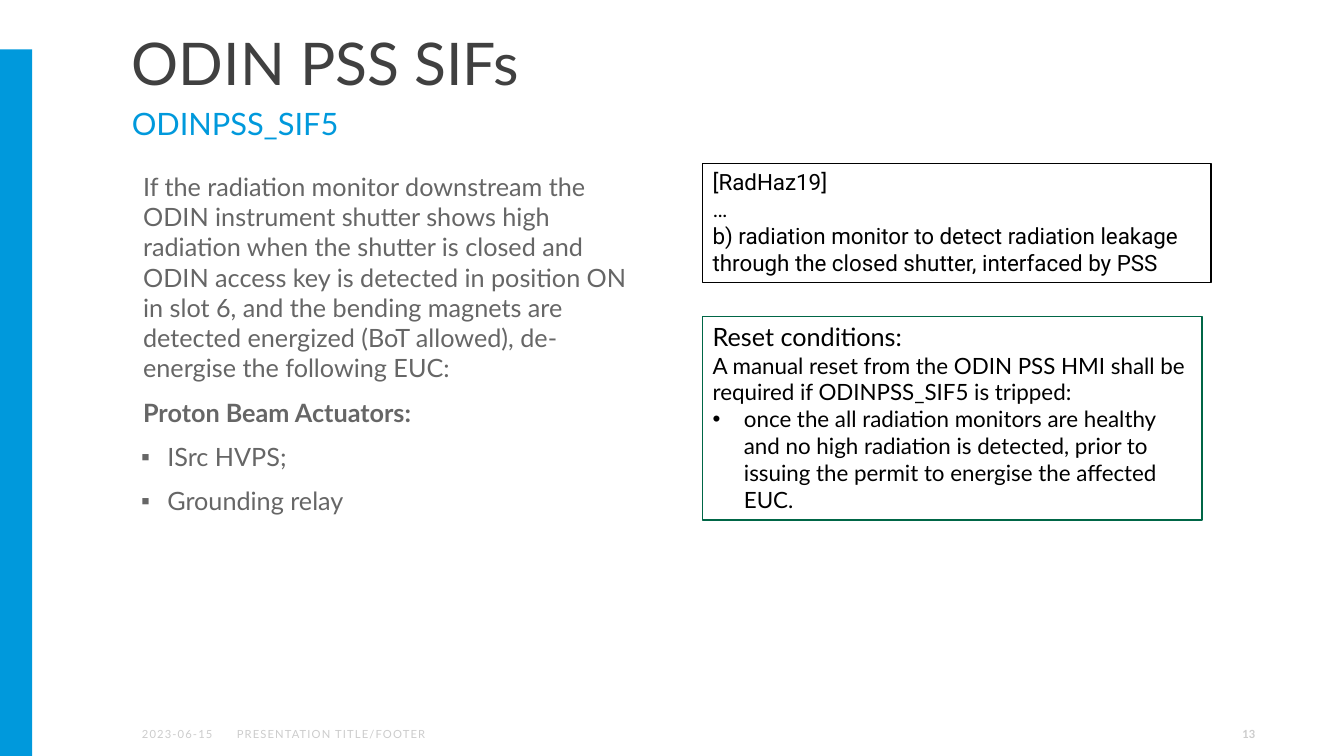
from lxml.etree import SubElement
from pptx import Presentation
from pptx.dml.color import RGBColor
from pptx.enum.shapes import MSO_SHAPE
from pptx.enum.text import MSO_ANCHOR, PP_ALIGN
from pptx.oxml.ns import qn
from pptx.util import Inches, Pt

CELL = Inches(0.1)  # grid of 133.3 columns by 75 rows
COLUMNS, ROWS = 133.3, 75
BLUE, GREY, PALE, BLACK = "0099DC", "666666", "CCCCCC", "000000"

deck = Presentation()
deck.slide_width, deck.slide_height = int(COLUMNS * CELL), ROWS * CELL
slide = deck.slides.add_slide(deck.slide_layouts[6])


def colour(hex_value):
    return RGBColor.from_string(hex_value)


def add_block(place, paragraphs, hue, frame_format=None, outline=None,
              face="Lato", align=PP_ALIGN.LEFT, tracking=0):
    """Paragraphs are (text, font format, indent format) tuples."""
    bounds = [int(cells * CELL) for cells in place]
    if outline:
        block = slide.shapes.add_shape(MSO_SHAPE.RECTANGLE, *bounds)
        block.shadow.inherit = False
        block.fill.solid()
        block.fill.fore_color.rgb = colour("FFFFFF")
        block.line.color.rgb = colour(outline)
        block.line.width = Pt(1)
    else:
        block = slide.shapes.add_textbox(*bounds)
    frame = block.text_frame
    settings = {"word_wrap": True, "vertical_anchor": MSO_ANCHOR.TOP}
    for name, value in (settings | (frame_format or {})).items():
        setattr(frame, name, value)
    for index, (text, font_format, layout) in enumerate(paragraphs):
        paragraph = frame.paragraphs[0] if index == 0 else frame.add_paragraph()
        properties = paragraph._p.get_or_add_pPr()
        if "bullet" in layout:
            left, hanging = layout["indent"]
            properties.set("marL", str(Inches(left)))
            properties.set("indent", str(-Inches(hanging)))
            SubElement(properties, qn("a:buFont"), typeface="Arial")
            SubElement(properties, qn("a:buChar"), char=layout["bullet"])
        elif "indent" in layout:
            properties.set("marL", str(Inches(layout["indent"][0])))
        paragraph.alignment = align
        paragraph.line_spacing = layout.get("line_spacing")
        paragraph.space_before = Pt(layout.get("before", 0) if index else 0)
        run = paragraph.add_run()
        run.text = text
        for name, value in ({"name": face} | font_format).items():
            setattr(run.font, name, value)
        run.font.color.rgb = colour(hue)
        if tracking:
            run._r.get_or_add_rPr().set("spc", str(tracking))


# Side band
band = slide.shapes.add_shape(MSO_SHAPE.RECTANGLE, 0, int(4.9 * CELL),
                              int(3.2 * CELL), int((ROWS - 4.9) * CELL))
band.shadow.inherit = False
band.fill.solid()
band.fill.fore_color.rgb = colour(BLUE)
band.line.fill.background()

# Heading
add_block((12.1, 2.9, 102.4, 7.2),
          [("ODIN PSS SIFs", {"size": Pt(42)}, {"line_spacing": 0.9})], "404040",
          {"margin_bottom": Inches(0.02)})
add_block((12.1, 10.2, 102.4, 5.5), [("ODINPSS_SIF5", {"size": Pt(22)}, {})], BLUE,
          {"margin_top": Inches(0.02)})

# Safety function
plain = {"indent": (0.11, 0), "before": 10}
actuator = {"indent": (0.35, 0.26), "bullet": "▪", "before": 10}
body, strong = {"size": Pt(18)}, {"size": Pt(18), "bold": True}
add_block((13.1, 16.5, 50.9, 52.1), [
    ("If the radiation monitor downstream the ODIN instrument shutter shows high "
     "radiation when the shutter is closed and ODIN access key is detected in "
     "position ON in slot 6, and the bending magnets are detected energized "
     "(BoT allowed), de-energise the following EUC:", body, plain),
    ("Proton Beam Actuators:", strong, plain),
    ("ISrc HVPS;", body, actuator),
    ("Grounding relay", body, actuator),
], GREY, {"margin_left": 0, "margin_right": Inches(0.02)})

# Reset conditions and hazard reference
detail = {"size": Pt(16)}
add_block((69.7, 31.4, 49.5, 20.2), [
    ("Reset conditions:", body, {}),
    ("A manual reset from the ODIN PSS HMI shall be required if ODINPSS_SIF5 "
     "is tripped:", detail, {}),
    ("once the all radiation monitors are healthy and no high radiation is "
     "detected, prior to issuing the permit to energise the affected EUC.",
     detail, {"indent": (0.31, 0.31), "bullet": "•"}),
], BLACK, outline="006646")
add_block((69.7, 16.2, 50.4, 11.8), [
    ("[RadHaz19]", detail, {}),
    ("…", detail, {}),
    ("b) radiation monitor to detect radiation leakage through the closed "
     "shutter, interfaced by PSS", detail, {}),
], BLACK, outline=BLACK, face="Roboto")

# Footer
small, middle = {"size": Pt(8)}, {"vertical_anchor": MSO_ANCHOR.MIDDLE}
for left, width, words, weight, align, tracking in (
        (13.1, 9.1, "2023-06-15", False, PP_ALIGN.LEFT, 80),
        (22.5, 47.2, "PRESENTATION TITLE/FOOTER", False, PP_ALIGN.LEFT, 80),
        (95.5, 30, "13", True, PP_ALIGN.RIGHT, 0)):
    add_block((left, 70.8, width, 4), [(words, small | {"bold": weight}, {})], PALE,
              middle, align=align, tracking=tracking)

deck.save("out.pptx")
